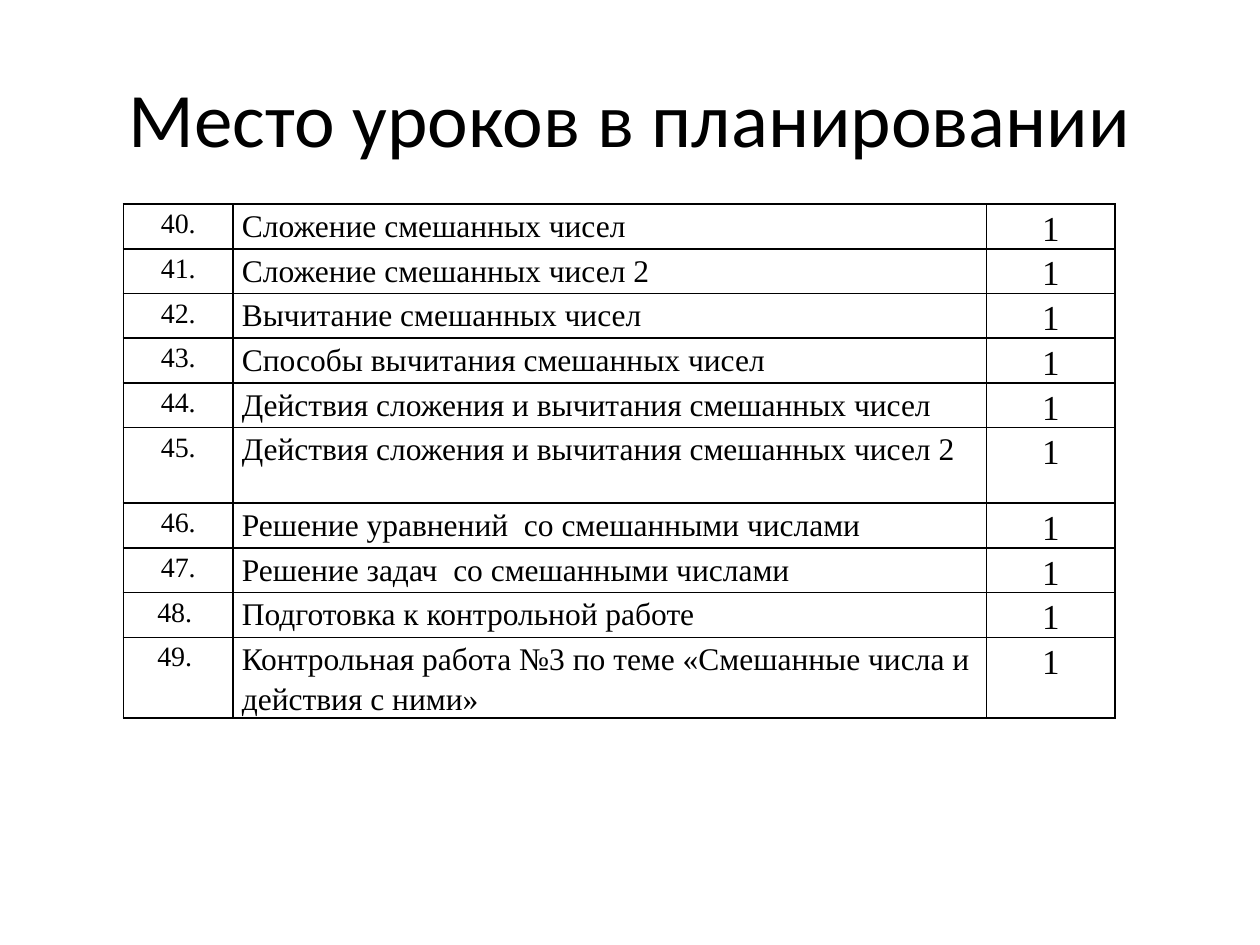
from lxml.etree import SubElement
from pptx import Presentation
from pptx.dml.color import RGBColor
from pptx.enum.text import MSO_ANCHOR, PP_ALIGN
from pptx.oxml.ns import qn
from pptx.util import Inches, Pt

COLORS = {"ink": "000000", "paper": "FFFFFF"}
INK = RGBColor.from_string(COLORS["ink"])

lessons = [
    ("40.", "Сложение смешанных чисел"),
    ("41.", "Сложение смешанных чисел 2"),
    ("42.", "Вычитание смешанных чисел"),
    ("43.", "Способы вычитания смешанных чисел"),
    ("44.", "Действия сложения и вычитания смешанных чисел"),
    ("45.", "Действия сложения и вычитания смешанных чисел 2"),
    ("46.", "Решение уравнений  со смешанными числами"),
    ("47.", "Решение задач  со смешанными числами"),
    ("48. ", "Подготовка к контрольной работе"),
    ("49. ", "Контрольная работа №3 по теме «Смешанные числа и действия с ними»"),
]
HOURS = "1"
ROW_HEIGHT = 0.355
TALL_ROWS = {5: 0.6, 9: 0.64}

# Width, text size and alignment of the number, topic and hours columns
COLUMNS = [
    (0.87, 16, PP_ALIGN.CENTER),
    (5.98, 18, PP_ALIGN.LEFT),
    (1.02, 20, PP_ALIGN.CENTER),
]
CELL_FORMAT = {
    "margin_left": Inches(0.07),
    "margin_right": Inches(0.07),
    "margin_top": 0,
    "margin_bottom": 0,
    "vertical_anchor": MSO_ANCHOR.TOP,
}


def set_font(font, name, size):
    font.name = name
    font.size = Pt(size)
    font.color.rgb = INK


def add_borders(cell):
    """Draw a 1 pt line on all four sides; call before the cell is filled."""
    properties = cell._tc.get_or_add_tcPr()
    for side in ("a:lnL", "a:lnR", "a:lnT", "a:lnB"):
        line = SubElement(properties, qn(side), w=str(Pt(1)))
        SubElement(SubElement(line, qn("a:solidFill")), qn("a:srgbClr"), val=COLORS["ink"])


presentation = Presentation()
presentation.slide_width = Inches(10)
presentation.slide_height = Inches(7.5)
slide = presentation.slides.add_slide(presentation.slide_layouts[5])

title = slide.shapes.title
title.left, title.top = Inches(0.5), Inches(0.3)
title.width, title.height = Inches(9), Inches(1.25)
title.text_frame.text = "Место уроков в планировании"
title.text_frame.vertical_anchor = MSO_ANCHOR.MIDDLE
heading = title.text_frame.paragraphs[0]
heading.alignment = PP_ALIGN.CENTER
set_font(heading.runs[0].font, "Calibri", 44)

row_heights = [TALL_ROWS.get(index, ROW_HEIGHT) for index in range(len(lessons))]
plan = slide.shapes.add_table(
    len(lessons), len(COLUMNS), Inches(0.98), Inches(1.62),
    Inches(sum(width for width, _, _ in COLUMNS)), Inches(sum(row_heights)),
).table
plan.first_row = False
plan.horz_banding = False
for column, (width, _, _) in zip(plan.columns, COLUMNS):
    column.width = Inches(width)

for row, height, lesson in zip(plan.rows, row_heights, lessons):
    row.height = Inches(height)
    for cell, text, (_, size, alignment) in zip(row.cells, (*lesson, HOURS), COLUMNS):
        add_borders(cell)
        cell.fill.solid()
        cell.fill.fore_color.rgb = RGBColor.from_string(COLORS["paper"])
        for attribute, value in CELL_FORMAT.items():
            setattr(cell, attribute, value)
        cell.text = text
        paragraph = cell.text_frame.paragraphs[0]
        paragraph.alignment = alignment
        paragraph.line_spacing = 1.15
        set_font(paragraph.runs[0].font, "Times New Roman", size)

presentation.save("out.pptx")
